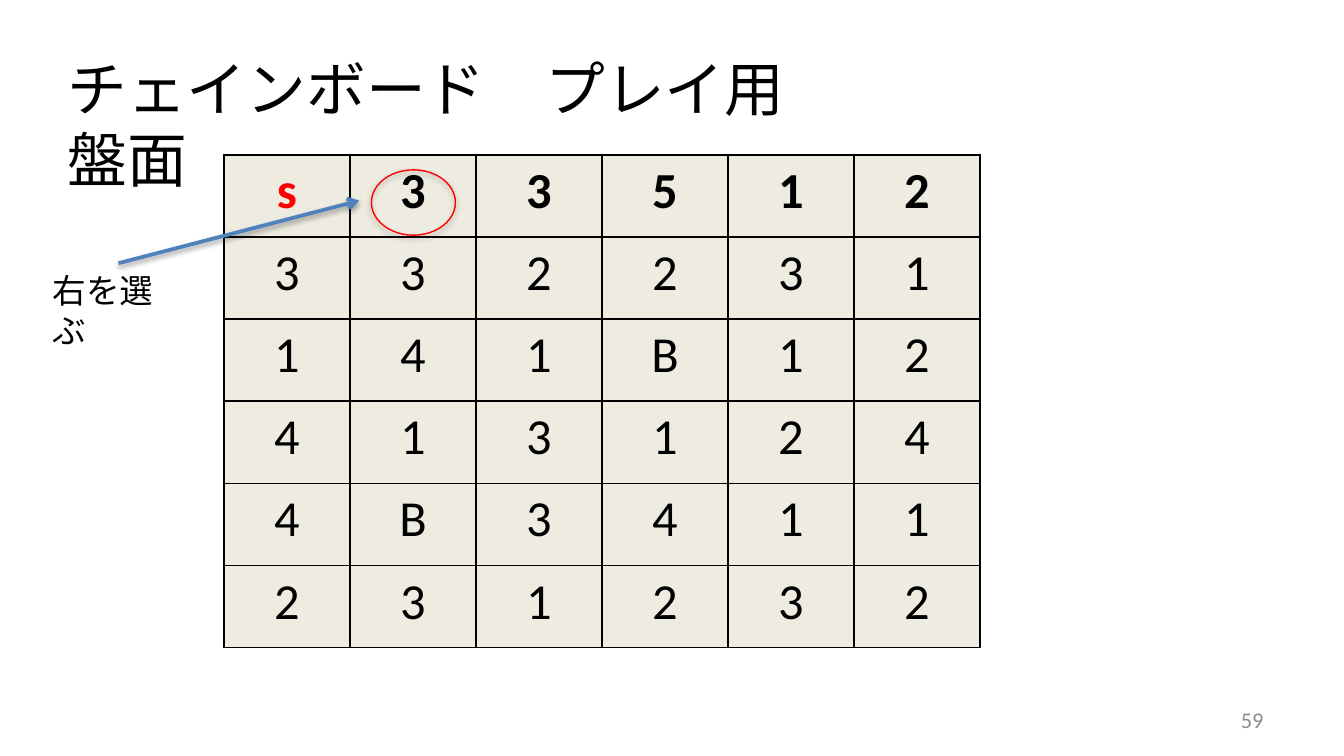
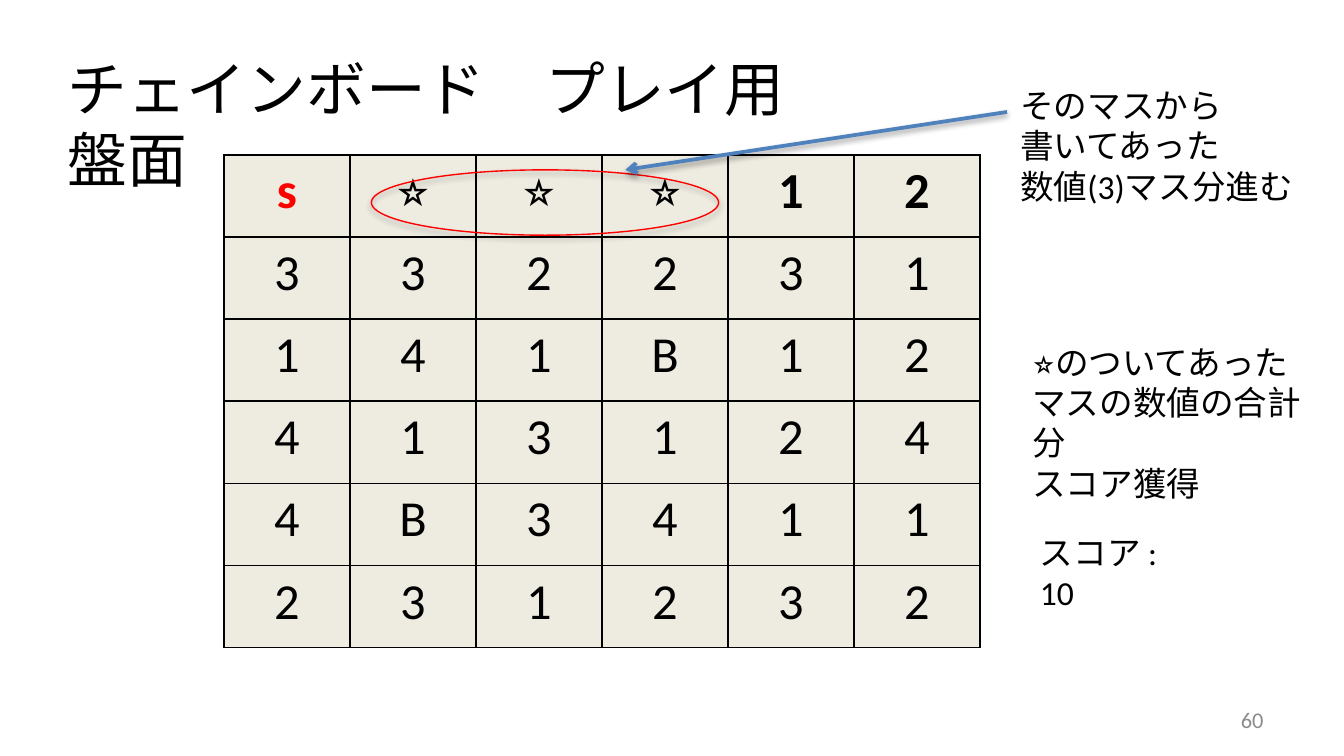
"""Builds two slides that explain a move on the chain board."""
from dataclasses import dataclass

from lxml import etree
from pptx import Presentation
from pptx.dml.color import RGBColor
from pptx.enum.shapes import MSO_CONNECTOR, MSO_SHAPE
from pptx.enum.text import MSO_ANCHOR, MSO_AUTO_SIZE, PP_ALIGN
from pptx.oxml.ns import qn
from pptx.util import Pt

OVAL = MSO_SHAPE.OVAL
STRAIGHT = MSO_CONNECTOR.STRAIGHT
TOP, MIDDLE = MSO_ANCHOR.TOP, MSO_ANCHOR.MIDDLE
LEFT, CENTER, RIGHT = PP_ALIGN.LEFT, PP_ALIGN.CENTER, PP_ALIGN.RIGHT
GROW, FIXED = MSO_AUTO_SIZE.SHAPE_TO_FIT_TEXT, MSO_AUTO_SIZE.NONE


@dataclass(frozen=True)
class Theme:
    font: str = "Calibri"
    ink: str = "000000"
    accent: str = "FF0000"
    arrow: str = "4F81BD"
    square: str = "EEECE1"
    muted: str = "8C8C8C"
    title_size: int = 32
    board_size: int = 27
    note_size: int = 18
    page_size: int = 12


TITLE = "チェインボード　プレイ用盤面"
START_ROW = ["s", "3", "3", "5", "1", "2"]
MOVED_ROW = ["s", "⭐️", "⭐️", "⭐️", "1", "2"]
LOWER_ROWS = [list(row) for row in ("332231", "141B12", "413124", "4B3411", "231232")]
BOARD_LEFT, BOARD_TOP = 120, 83
SQUARE_WIDTH, SQUARE_HEIGHT = 67.5, 44


def assign(target, values):
    for name, value in values.items():
        setattr(target, name, value)


def add_node(parent, tag, **attributes):
    return etree.SubElement(parent, qn(tag), attributes)


class Deck:
    def __init__(self, theme):
        self.theme = theme
        self.presentation = Presentation()
        assign(self.presentation, {"slide_width": Pt(720), "slide_height": Pt(405)})
        self.slide = None

    def new_slide(self, page, top_row):
        self.slide = self.presentation.slides.add_slide(self.presentation.slide_layouts[6])
        theme = self.theme
        self.add_text([TITLE], 29, 24, 414, 46, theme.title_size)
        self.add_board([top_row, *LOWER_ROWS])
        self.add_text([page], 516, 375, 168, 21.5, theme.page_size, theme.muted,
                      RIGHT, MIDDLE, FIXED)

    def add_words(self, paragraph, words, size, color, align, bold=False):
        paragraph.alignment = align
        run = paragraph.add_run()
        run.text = words
        assign(run.font, {"name": self.theme.font, "size": Pt(size), "bold": bold})
        run.font.color.rgb = RGBColor.from_string(color)

    def add_text(self, lines, left, top, width, height, size, color=None,
                 align=LEFT, anchor=TOP, fit=GROW):
        frame = self.slide.shapes.add_textbox(
            Pt(left), Pt(top), Pt(width), Pt(height)).text_frame
        assign(frame, {"word_wrap": True, "auto_size": fit, "vertical_anchor": anchor})
        for index, line in enumerate(lines):
            paragraph = frame.add_paragraph() if index else frame.paragraphs[0]
            self.add_words(paragraph, line, size, color or self.theme.ink, align)

    def add_note(self, lines, left, top, width, height):
        self.add_text(lines, left, top, width, height, self.theme.note_size)

    def add_board(self, rows):
        count = len(rows)
        table = self.slide.shapes.add_table(
            count, count, Pt(BOARD_LEFT), Pt(BOARD_TOP),
            Pt(SQUARE_WIDTH * count), Pt(SQUARE_HEIGHT * count)).table
        assign(table, {"first_row": False, "horz_banding": False})
        for column in table.columns:
            column.width = Pt(SQUARE_WIDTH)
        for row_index, row in enumerate(rows):
            table.rows[row_index].height = Pt(SQUARE_HEIGHT)
            for column_index, mark in enumerate(row):
                self.fill_square(table.cell(row_index, column_index), mark, row_index == 0)

    def fill_square(self, cell, mark, bold):
        theme = self.theme
        assign(cell, {"margin_top": Pt(3), "margin_bottom": Pt(3)})
        properties = cell._tc.get_or_add_tcPr()
        for side in "LRTB":
            border = add_node(properties, f"a:ln{side}", w=str(Pt(1)))
            add_node(add_node(border, "a:solidFill"), "a:srgbClr", val=theme.ink)
        cell.fill.solid()
        cell.fill.fore_color.rgb = RGBColor.from_string(theme.square)
        color = theme.accent if mark == "s" else theme.ink
        self.add_words(cell.text_frame.paragraphs[0], mark, theme.board_size, color,
                       CENTER, bold)

    def outline(self, shape, color, width, distance, opacity):
        shape.line.color.rgb = RGBColor.from_string(color)
        shape.line.width = Pt(width)
        effects = add_node(shape.element.spPr, "a:effectLst")
        shadow = add_node(effects, "a:outerShdw", blurRad=str(Pt(3.1)),
                          dist=str(Pt(distance)), dir="5400000", rotWithShape="0")
        shade = add_node(shadow, "a:srgbClr", val=self.theme.ink)
        add_node(shade, "a:alpha", val=str(opacity * 1000))

    def add_ring(self, width):
        ring = self.slide.shapes.add_shape(OVAL, Pt(199), Pt(91), Pt(width), Pt(35))
        ring.fill.background()
        self.outline(ring, self.theme.accent, 0.75, 1.8, 35)

    def add_arrow(self, *ends):
        arrow = self.slide.shapes.add_connector(STRAIGHT, *map(Pt, ends))
        self.outline(arrow, self.theme.arrow, 2, 1.6, 38)
        add_node(arrow.element.spPr.find(qn("a:ln")), "a:tailEnd", type="arrow")


def main():
    deck = Deck(Theme())

    deck.new_slide("59", START_ROW)
    deck.add_ring(45)
    deck.add_arrow(63.5, 141, 192.5, 107.5)
    deck.add_note(["右を選ぶ"], 21, 141, 85, 29)

    deck.new_slide("60", MOVED_ROW)
    deck.add_ring(186)
    deck.add_arrow(539.5, 60, 335, 91)
    deck.add_note(["そのマスから", "書いてあった", "数値(3)マス分進む"], 539.5, 42, 160.5, 73)
    deck.add_note(["⭐️のついてあった", "マスの数値の合計分", "スコア獲得"], 546, 179.5, 174, 73)
    deck.add_note(["スコア : 10"], 550, 281.5, 93.5, 29)

    deck.presentation.save("out.pptx")


if __name__ == "__main__":
    main()
